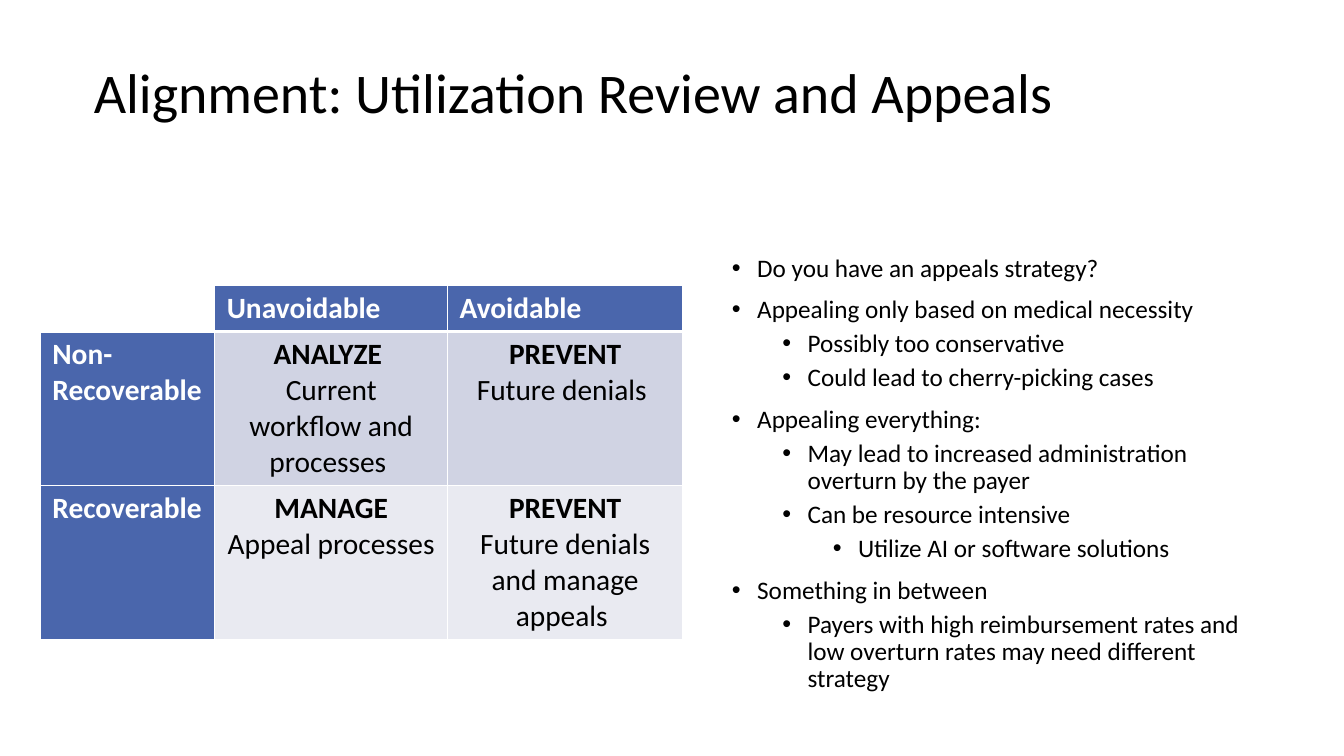
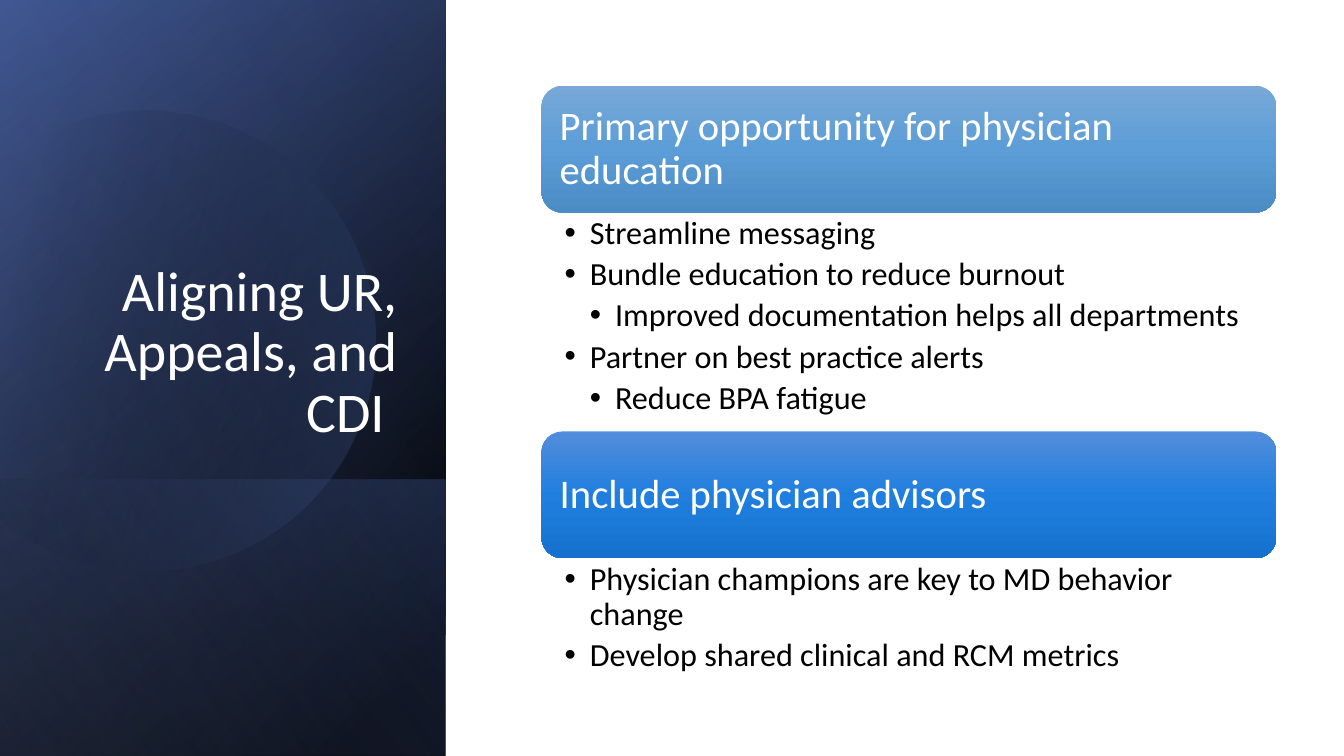
from lxml import etree
from pptx import Presentation
from pptx import util as u
from pptx.dml.color import RGBColor
from pptx.enum import shapes, text
from pptx.oxml import ns

COLORS = {
    "white": "FFFFFF", "black": "000000", "accent": "4A66AC",
    "navy": "384C81", "mist": "90A2CF",
    "band_dark": "D0D3E3", "band_light": "E9EAF1",
    "sky_top": "77A8D7", "sky": "5C9DD7", "sky_low": "4C8CC5",
    "azure_top": "538DDC", "azure": "207FDE", "azure_low": "1571CD",
}
FONT = "Calibri"
LEFT, CENTER, RIGHT = (text.PP_ALIGN.LEFT, text.PP_ALIGN.CENTER,
                       text.PP_ALIGN.RIGHT)
TOP, MIDDLE, BOTTOM = (text.MSO_ANCHOR.TOP, text.MSO_ANCHOR.MIDDLE,
                       text.MSO_ANCHOR.BOTTOM)


def element(parent, tag, **attributes):
    return etree.SubElement(parent, ns.qn(tag), attributes)


def write(paragraph, words, size=18, color="black", bold=False, align=LEFT,
          line=0.9, before=0, after=0, level=None, indent=0):
    run = paragraph.add_run()
    run.text = words
    run.font.name, run.font.size, run.font.bold = FONT, u.Pt(size), bold
    run.font.color.rgb = RGBColor.from_string(COLORS[color])
    paragraph.alignment, paragraph.line_spacing = align, line
    paragraph.space_before, paragraph.space_after = u.Pt(before), u.Pt(after)
    if level is not None:
        paragraph.level = level
        properties = paragraph._p.get_or_add_pPr()
        properties.set("marL", str(u.Inches(indent)))
        properties.set("indent", str(u.Inches(-0.25)))
        element(properties, "a:buFont", typeface="Arial")
        element(properties, "a:buChar", char="•")


def paragraphs(frame, count):
    return [frame.paragraphs[0]] + [frame.add_paragraph()
                                    for _ in range(count - 1)]


class Deck:
    def __init__(self):
        self.file = Presentation()
        self.file.slide_width = u.Inches(13.33)
        self.file.slide_height = u.Inches(7.5)
        self.slide = None

    def add_slide(self, layout):
        self.slide = self.file.slides.add_slide(self.file.slide_layouts[layout])

    def shape(self, kind, box):
        shape = self.slide.shapes.add_shape(kind, *map(u.Inches, box))
        shape.shadow.inherit = False
        shape.line.fill.background()
        return shape

    def frame(self, shape, box, anchor, margins=(0.1, 0.05)):
        shape.left, shape.top, shape.width, shape.height = map(u.Inches, box)
        frame = shape.text_frame
        frame.word_wrap, frame.auto_size = True, text.MSO_AUTO_SIZE.NONE
        frame.vertical_anchor = anchor
        frame.margin_left = frame.margin_right = u.Inches(margins[0])
        frame.margin_top = frame.margin_bottom = u.Inches(margins[1])
        return frame

    def title(self, words, box, anchor=MIDDLE, **style):
        title = self.slide.shapes.title
        self.slide.shapes._spTree.append(title._element)
        frame = self.frame(title, box, anchor)
        write(frame.paragraphs[0], words, size=40, **style)

    def title_band(self, height):
        band = self.shape(shapes.MSO_SHAPE.RECTANGLE, (0, 0, 13.33, height))
        band.fill.solid()
        band.fill.fore_color.rgb = RGBColor.from_string(COLORS["white"])

    def bullets(self, index, box, items, size, step, anchor=TOP,
                margins=(0.1, 0.05), before=(0, 0), after=0):
        frame = self.frame(self.slide.placeholders[index], box, anchor, margins)
        for paragraph, (level, words) in zip(paragraphs(frame, len(items)), items):
            write(paragraph, words, size=size, level=level,
                  indent=0.25 + level * step, before=before[level > 0],
                  after=after)

    def gradient(self, shape, stops, angle):
        shape.fill.gradient()
        fill = shape._element.spPr.find(ns.qn("a:gradFill"))
        for child in list(fill):
            fill.remove(child)
        fill.set("rotWithShape", "1")
        stop_list = element(fill, "a:gsLst")
        for position, color, opacity in stops:
            stop = element(stop_list, "a:gs", pos=str(position * 1000))
            tint = element(stop, "a:srgbClr", val=COLORS[color])
            if opacity < 100:
                element(tint, "a:alpha", val=str(opacity * 1000))
        element(fill, "a:lin", ang=str(angle * 60000), scaled="0")

    def panel(self, top, width, height, stops, angle):
        left = (width - height) / 2
        panel = self.shape(shapes.MSO_SHAPE.RECTANGLE,
                           (left, top - left, height, width))
        panel.rotation = 90
        panel._element.spPr.xfrm.set("flipH", "1")
        self.gradient(panel, stops, angle)

    def disc(self, x, y, radius, cut, tilt, stops, angle):
        disc = self.shape(shapes.MSO_SHAPE.CHORD,
                          (x - radius, y - radius, 2 * radius, 2 * radius))
        disc.rotation = -tilt
        disc.adjustments[0] = (360 - cut + tilt) * 0.6
        disc.adjustments[1] = (cut + tilt) * 0.6
        self.gradient(disc, stops, angle)

    def heading(self, words, box, tones):
        heading = self.shape(shapes.MSO_SHAPE.ROUNDED_RECTANGLE, box)
        self.gradient(heading, [(i * 50, tone, 100)
                                for i, tone in enumerate(tones)], 90)
        frame = self.frame(heading, box, MIDDLE, (0.12, 0.12))
        write(frame.paragraphs[0], words, size=29, color="white")

    def matrix(self, left, top, widths, heights, rows):
        table = self.slide.shapes.add_table(
            len(rows), len(widths), u.Inches(left), u.Inches(top),
            u.Inches(sum(widths)), u.Inches(sum(heights))).table
        for column, width in zip(table.columns, widths):
            column.width = u.Inches(width)
        for row, height in zip(table.rows, heights):
            row.height = u.Inches(height)
        for r, row in enumerate(rows):
            for c, lines in enumerate(row):
                self.cell(table.cell(r, c), r, c, lines)

    def cell(self, cell, row, column, lines):
        label = row == 0 or column == 0
        fill = "accent" if label else ("band_dark", "band_light")[row - 1]
        cell.fill.solid()
        cell.fill.fore_color.rgb = RGBColor.from_string(
            COLORS[fill if lines else "white"])
        cell.margin_left = cell.margin_right = u.Inches(0.12)
        cell.margin_top = cell.margin_bottom = u.Inches(0.05)
        for i, (paragraph, words) in enumerate(
                zip(paragraphs(cell.text_frame, len(lines)), lines)):
            write(paragraph, words, size=21, line=1, bold=i == 0,
                  color="white" if label else "black",
                  align=LEFT if label else CENTER)
        properties = cell._tc.get_or_add_tcPr()
        for i, side in enumerate("LRTB"):
            thick = (row, side) in ((0, "B"), (1, "T"))
            border = element(properties, f"a:ln{side}",
                             w=str(u.Pt(3 if thick else 1)))
            element(element(border, "a:solidFill"), "a:srgbClr",
                    val=COLORS["white"])
            properties.insert(i, border)


def build_strategy(deck):
    deck.add_slide(1)
    deck.title_band(1.9)
    deck.title("Alignment: Utilization Review and Appeals",
               (0.83, 0.34, 11.69, 1.21))
    deck.bullets(1, (7.16, 2.57, 5.36, 4.27), [
        (0, "Do you have an appeals strategy?"),
        (0, "Appealing only based on medical necessity"),
        (1, "Possibly too conservative"),
        (1, "Could lead to cherry-picking cases"),
        (0, "Appealing everything:"),
        (1, "May lead to increased administration overturn by the payer"),
        (1, "Can be resource intensive"),
        (2, "Utilize AI or software solutions"),
        (0, "Something in between"),
        (1, "Payers with high reimbursement rates and low overturn rates "
            "may need different strategy"),
    ], size=18, step=0.5, anchor=MIDDLE, before=(10, 5))
    deck.matrix(0.4, 2.83, (1.73, 2.31, 2.33), (0.46, 1.4, 1.44), [
        [[], ["Unavoidable"], ["Avoidable"]],
        [["Non-Recoverable"],
         ["ANALYZE ", "Current workflow and processes "],
         ["PREVENT", "Future denials "]],
        [["Recoverable"],
         ["MANAGE", "Appeal processes"],
         ["PREVENT", "Future denials and manage appeals "]],
    ])


def build_alignment(deck):
    deck.add_slide(3)
    width, height, lower = 4.42, 7.5, 2.74
    deck.panel(0, width, height, [(8, "black", 100), (100, "navy", 100)], 50)
    deck.panel(0, width, height, [(0, "black", 0), (99, "accent", 46)], 30)
    deck.panel(height - lower, width, lower,
               [(2, "accent", 29), (100, "black", 30)], 130)
    deck.disc(1.45, 3.38, 2.28, 134.6, 16.1,
              [(29, "black", 0), (100, "accent", 43)], 30)
    deck.panel(0, width, height, [(0, "black", 0), (99, "mist", 11)], 120)
    deck.title("Aligning UR, Appeals, and CDI ", (0.63, 1.84, 3.41, 2.62),
               anchor=BOTTOM, color="white", align=RIGHT)

    left, wide, tall, top = 5.37, 7.29, 1.26, 0.85
    sections = [
        ("Primary opportunity for physician education",
         ("sky_top", "sky", "sky_low"), 2.17, [
             (0, "Streamline messaging"),
             (0, "Bundle education to reduce burnout"),
             (1, "Improved documentation helps all departments"),
             (0, "Partner on best practice alerts"),
             (1, "Reduce BPA fatigue")]),
        ("Include physician advisors",
         ("azure_top", "azure", "azure_low"), 1.21, [
             (0, "Physician champions are key to MD behavior change"),
             (0, "Develop shared clinical and RCM metrics")]),
    ]
    for index, (words, tones, depth, items) in enumerate(sections, 1):
        deck.heading(words, (left, top, wide, tall), tones)
        deck.bullets(index, (left, top + tall, wide, depth), items, size=23,
                     step=0.25, margins=(0.23, 0.04), after=4.6)
        top += tall + depth


def main():
    deck = Deck()
    build_strategy(deck)
    build_alignment(deck)
    deck.file.save("out.pptx")


if __name__ == "__main__":
    main()
